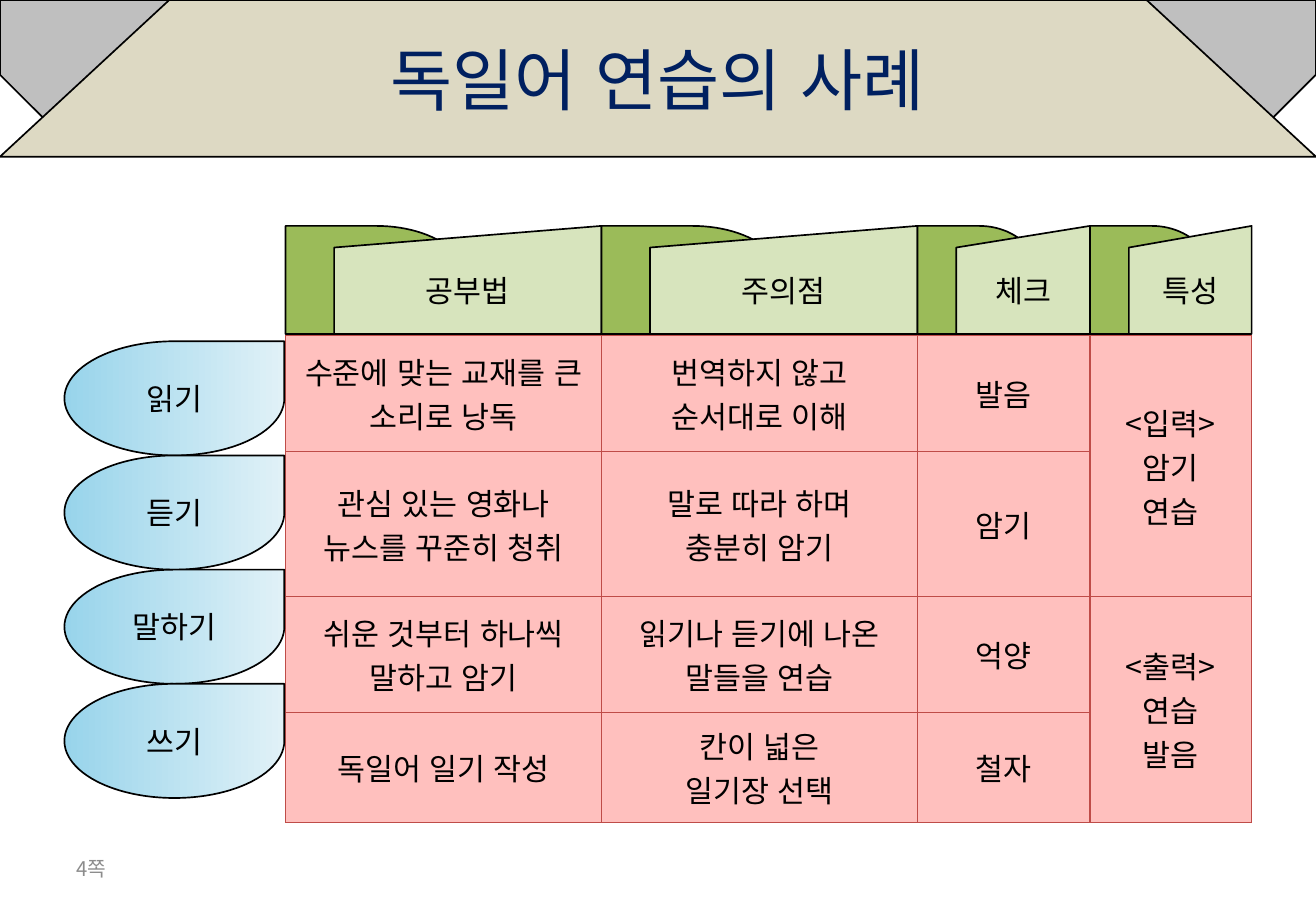
import pptx
import pptx.util
import pptx.dml.color
import pptx.enum.lang
import pptx.enum.shapes
import pptx.enum.text
import pptx.oxml
import pptx.oxml.ns

Inches = pptx.util.Inches
Pt = pptx.util.Pt
SHAPE = pptx.enum.shapes.MSO_SHAPE
ALIGN = pptx.enum.text.PP_ALIGN
MIDDLE = pptx.enum.text.MSO_ANCHOR.MIDDLE


def rgb(value):
    return pptx.dml.color.RGBColor.from_string(value)


class Deck:
    """Holds the shared style and the current slide, and draws each kind of element."""

    font = "Noto Sans CJK KR"
    black = "000000"
    border = "BF4C48"
    cell_fill = "FFC0BE"

    def __init__(self, width, height):
        self.prs = pptx.Presentation()
        self.prs.slide_width = Inches(width)
        self.prs.slide_height = Inches(height)
        self.slide = self.prs.slides.add_slide(self.prs.slide_layouts[5])

    def set_text(self, tf, text, size=18, color=black, align=ALIGN.CENTER):
        tf.text = text
        tf.word_wrap = True
        for p in tf.paragraphs:
            p.alignment = align
            for r in p.runs:
                r.font.size = Pt(size)
                r.font.name = self.font
                r.font.color.rgb = rgb(color)
                r.font.language_id = pptx.enum.lang.MSO_LANGUAGE_ID.KOREAN
                ea = pptx.oxml.parse_xml(
                    f'<a:ea {pptx.oxml.ns.nsdecls("a")} typeface="{self.font}"/>')
                r.font._element.append(ea)

    def title(self, text, left, top, width, height):
        sp = self.slide.shapes.title
        sp.left, sp.top = Inches(left), Inches(top)
        sp.width, sp.height = Inches(width), Inches(height)
        self.set_text(sp.text_frame, text, 40, "002060")
        sp.text_frame.vertical_anchor = MIDDLE
        self.slide.shapes._spTree.append(sp._element)

    def shape(self, kind, left, top, width, height, fills, text="", adjustments=()):
        sp = self.slide.shapes.add_shape(
            kind, Inches(left), Inches(top), Inches(width), Inches(height))
        sp.shadow.inherit = False
        for i, value in enumerate(adjustments):
            sp.adjustments[i] = value
        if len(fills) == 1:
            sp.fill.solid()
            sp.fill.fore_color.rgb = rgb(fills[0])
        else:
            sp.fill.gradient()
            sp.fill.gradient_angle = 0
            for stop, color in zip(sp.fill.gradient_stops, fills):
                stop.color.rgb = rgb(color)
        sp.line.color.rgb = rgb(self.black)
        sp.line.width = Pt(1)
        if text:
            self.set_text(sp.text_frame, text)
            sp.text_frame.vertical_anchor = MIDDLE

    def label(self, text, left, top, width, height):
        box = self.slide.shapes.add_textbox(
            Inches(left), Inches(top), Inches(width), Inches(height))
        self.set_text(box.text_frame, text, 12, "8C8C8C", ALIGN.LEFT)
        box.text_frame.vertical_anchor = MIDDLE

    def style_cell(self, cell):
        cell.vertical_anchor = MIDDLE
        cell.fill.solid()
        cell.fill.fore_color.rgb = rgb(self.cell_fill)
        tcPr = cell._tc.get_or_add_tcPr()
        for i, side in enumerate(("lnL", "lnR", "lnT", "lnB")):
            tcPr.insert(i, pptx.oxml.parse_xml(
                f'<a:{side} {pptx.oxml.ns.nsdecls("a")} w="{Pt(0.75)}"><a:solidFill>'
                f'<a:srgbClr val="{self.border}"/></a:solidFill></a:{side}>'))

    def table(self, rows, left, top, widths, heights, merges):
        table = self.slide.shapes.add_table(
            len(heights), len(widths), Inches(left), Inches(top),
            Inches(sum(widths)), Inches(sum(heights))).table
        table.first_row = table.horz_banding = False
        for column, width in zip(table.columns, widths):
            column.width = Inches(width)
        for row, height in zip(table.rows, heights):
            row.height = Inches(height)
        for first, last in merges:
            table.cell(*first).merge(table.cell(*last))
        for i, row in enumerate(rows):
            for j, text in enumerate(row):
                cell = table.cell(i, j)
                self.style_cell(cell)
                if text:
                    self.set_text(cell.text_frame, text)


def main():
    deck = Deck(10.83, 7.5)
    deck.shape(SHAPE.SNIP_2_SAME_RECTANGLE, 0, 0, 10.83, 1.23, ["BFBFBF"],
               adjustments=(0, 0.5))
    deck.shape(SHAPE.TRAPEZOID, 0, 0, 10.83, 1.29, ["DDD9C3"], adjustments=(1.08,))
    deck.title("독일어 연습의 사례", 0.54, 0.02, 9.75, 1.25)

    widths = [2.6, 2.6, 1.42, 1.33]
    rows = [
        ["수준에 맞는 교재를 큰 소리로 낭독", "번역하지 않고\n순서대로 이해", "발음",
         "<입력>\n암기\n연습"],
        ["관심 있는 영화나\n뉴스를 꾸준히 청취", "말로 따라 하며\n충분히 암기", "암기", ""],
        ["쉬운 것부터 하나씩 말하고 암기", "읽기나 듣기에 나온 말들을 연습", "억양",
         "<출력>\n연습\n발음"],
        ["독일어 일기 작성", "칸이 넓은\n일기장 선택", "철자", ""],
    ]
    table_left = 2.35
    deck.table(rows, table_left, 2.76, widths, [0.96, 1.19, 0.96, 0.9],
               [((0, 3), (1, 3)), ((2, 3), (3, 3))])
    deck.label("4쪽", 0.53, 6.95, 2.53, 0.4)

    headers = [("공부법", 1.5, 0.4), ("주의점", 1.5, 0.4),
               ("체크", 1.02, 0.32), ("특성", 1.02, 0.32)]
    left = table_left
    for (text, tab, inset), width in zip(headers, widths):
        deck.shape(SHAPE.FLOWCHART_DELAY, left, 1.86, tab, 0.89, ["9BBB59"])
        deck.shape(SHAPE.FLOWCHART_MANUAL_INPUT, left + inset, 1.86, width - inset, 0.89,
                   ["D7E4BD"], text)
        left += width

    for i, skill in enumerate(["읽기", "듣기", "말하기", "쓰기"]):
        deck.shape(SHAPE.TEAR, 0.53, 2.81 + 0.94 * i, 1.81, 0.94,
                   ["98D4EB", "E0F1F7"], skill)

    deck.prs.save("out.pptx")


if __name__ == "__main__":
    main()
